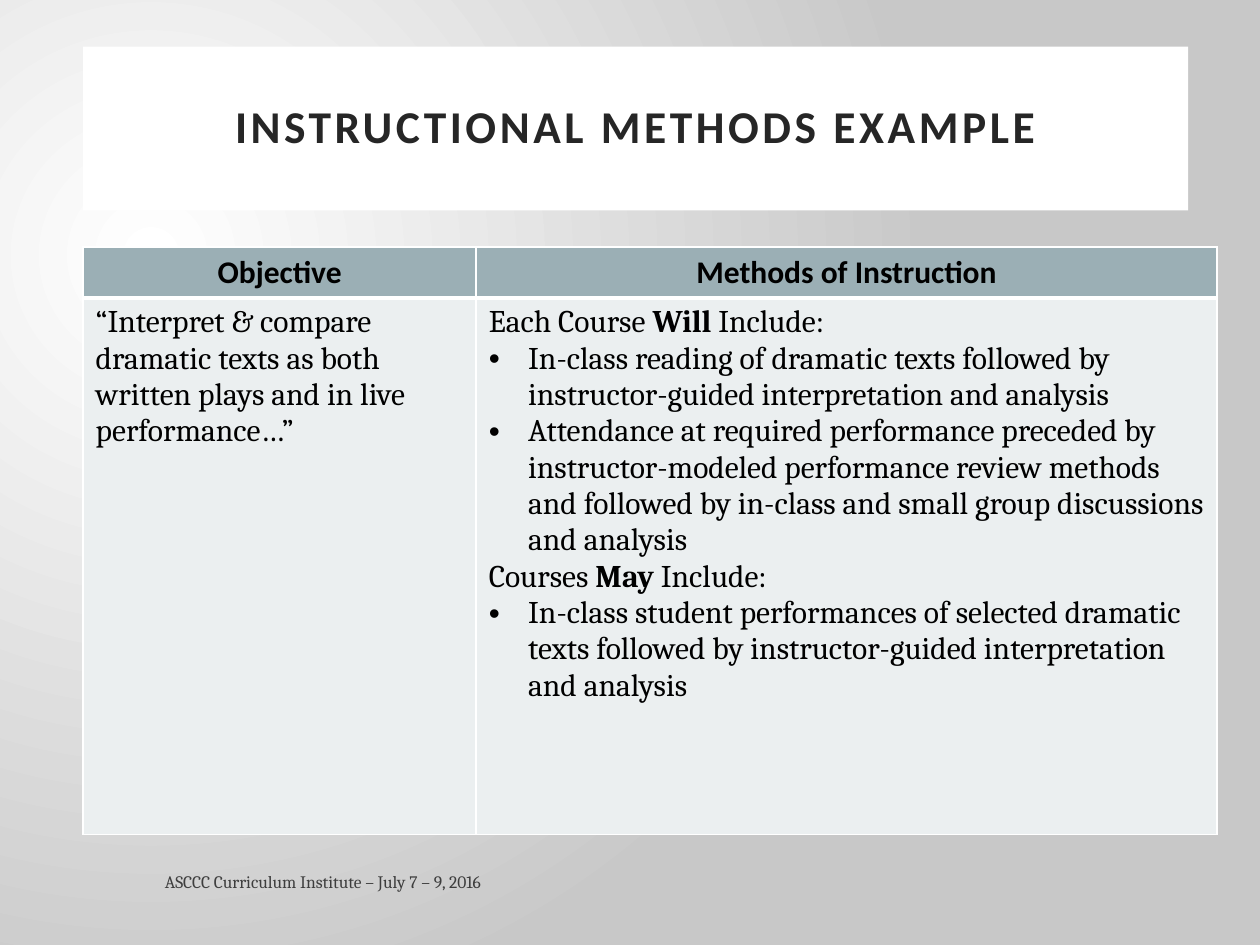
from lxml import etree
from pptx import Presentation
from pptx.dml.color import RGBColor
from pptx.enum import text
from pptx.oxml.ns import qn
from pptx.util import Pt

COLORS = {
    "white": "FFFFFF",
    "backdrop": "C8C8C8",
    "title": "262626",
    "text": "000000",
    "header": "9BAFB5",
    "body": "EBEFF0",
}
TITLE = "INSTRUCTIONAL METHODS EXAMPLE"
HEADERS = ["Objective", "Methods of Instruction"]
OBJECTIVE = [
    (False, ["“Interpret & compare dramatic texts as both written plays and in live performance…”"]),
]
METHODS = [
    (False, ["Each Course ", "Will", " Include:"]),
    (True, ["In-class reading of dramatic texts followed by instructor-guided "
            "interpretation and analysis"]),
    (True, ["Attendance at required performance preceded by instructor-modeled "
            "performance review methods and followed by in-class and small group "
            "discussions and analysis"]),
    (False, ["Courses ", "May", " Include:"]),
    (True, ["In-class student performances of selected dramatic texts followed by "
            "instructor-guided interpretation and analysis"]),
]
FOOTER = "ASCCC Curriculum Institute – July 7 – 9, 2016"
LEFT = 47.5
COLUMNS = [224.6, 423.4]
ROWS = [28.8, 306.7]
INDENT = 22.5


def rgb(name):
    return RGBColor.from_string(COLORS[name])


def set_font(p, name, size, color, bold=False):
    p.font.name, p.font.size, p.font.bold = name, Pt(size), bold
    p.font.color.rgb = rgb(color)


def paint_background(slide):
    fill = slide.background.fill
    fill.gradient()
    for stop, color, position in zip(fill.gradient_stops, ("white", "backdrop"), (0, 1)):
        stop.color.rgb = rgb(color)
        stop.position = position
    grad = slide.element.find(".//" + qn("a:gradFill"))
    grad.remove(grad.find(qn("a:lin")))
    circle = etree.SubElement(grad, qn("a:path"), path="circle")
    etree.SubElement(circle, qn("a:fillToRect"), l="50000", t="55000", r="125000", b="100000")


def add_title(slide):
    sp = slide.shapes.title
    sp.left, sp.top, sp.width, sp.height = Pt(LEFT), Pt(26.6), Pt(631.4), Pt(93.6)
    sp.fill.solid()
    sp.fill.fore_color.rgb = rgb("white")
    tf = sp.text_frame
    tf.vertical_anchor = text.MSO_ANCHOR.MIDDLE
    p = tf.paragraphs[0]
    p.alignment, p.line_spacing = text.PP_ALIGN.CENTER, 0.9
    r = p.add_run()
    r.text = TITLE
    r._r.get_or_add_rPr().set("spc", "200")
    set_font(p, "Calibri", 26, "title", True)


def style_cell(cell, fill, widths):
    cell.fill.solid()
    cell.fill.fore_color.rgb = rgb(fill)
    tc_pr = cell._tc.get_or_add_tcPr()
    for i, (side, width) in enumerate(zip("LRTB", widths)):
        line = etree.Element(qn(f"a:ln{side}"), w=str(Pt(width)))
        solid = etree.SubElement(line, qn("a:solidFill"))
        etree.SubElement(solid, qn("a:srgbClr"), val=COLORS["white"])
        tc_pr.insert(i, line)


def fill_body(cell, items):
    tf = cell.text_frame
    for i, (bulleted, parts) in enumerate(items):
        p = tf.paragraphs[0] if i == 0 else tf.add_paragraph()
        if bulleted:
            p_pr = p._p.get_or_add_pPr()
            p_pr.set("marL", str(Pt(INDENT)))
            p_pr.set("indent", str(-Pt(INDENT)))
            etree.SubElement(p_pr, qn("a:buFont"), typeface="Arial")
            etree.SubElement(p_pr, qn("a:buChar"), char="•")
        set_font(p, "Cambria", 18, "text")
        for n, part in enumerate(parts):
            r = p.add_run()
            r.text = part
            if n == 1:
                r.font.bold = True


def add_methods_table(slide):
    frame = slide.shapes.add_table(2, 2, Pt(LEFT), Pt(141.1), Pt(sum(COLUMNS)), Pt(sum(ROWS)))
    table = frame.table
    table.horz_banding = False
    for column, width in zip(table.columns, COLUMNS):
        column.width = Pt(width)
    for row, height in zip(table.rows, ROWS):
        row.height = Pt(height)
    for col, (header, items) in enumerate(zip(HEADERS, (OBJECTIVE, METHODS))):
        head, body = table.cell(0, col), table.cell(1, col)
        style_cell(head, "header", (1, 1, 1, 3))
        style_cell(body, "body", (1, 1, 3, 1))
        p = head.text_frame.paragraphs[0]
        p.alignment = text.PP_ALIGN.CENTER
        p.add_run().text = header
        set_font(p, "Calibri", 18, "text", True)
        fill_body(body, items)


def add_footer(slide):
    sp = slide.shapes.add_textbox(Pt(87.1), Pt(491), Pt(358.6), Pt(25.2))
    tf = sp.text_frame
    tf.word_wrap = True
    tf.vertical_anchor = text.MSO_ANCHOR.MIDDLE
    p = tf.paragraphs[0]
    p.add_run().text = FOOTER
    set_font(p, "Cambria", 10, "text")
    etree.SubElement(p._p.find(".//" + qn("a:srgbClr")), qn("a:alpha"), val="70000")


def main():
    prs = Presentation()
    prs.slide_width, prs.slide_height = Pt(720), Pt(540)
    s = prs.slides.add_slide(prs.slide_layouts[5])
    paint_background(s)
    add_title(s)
    add_methods_table(s)
    add_footer(s)
    prs.save("out.pptx")


if __name__ == "__main__":
    main()
